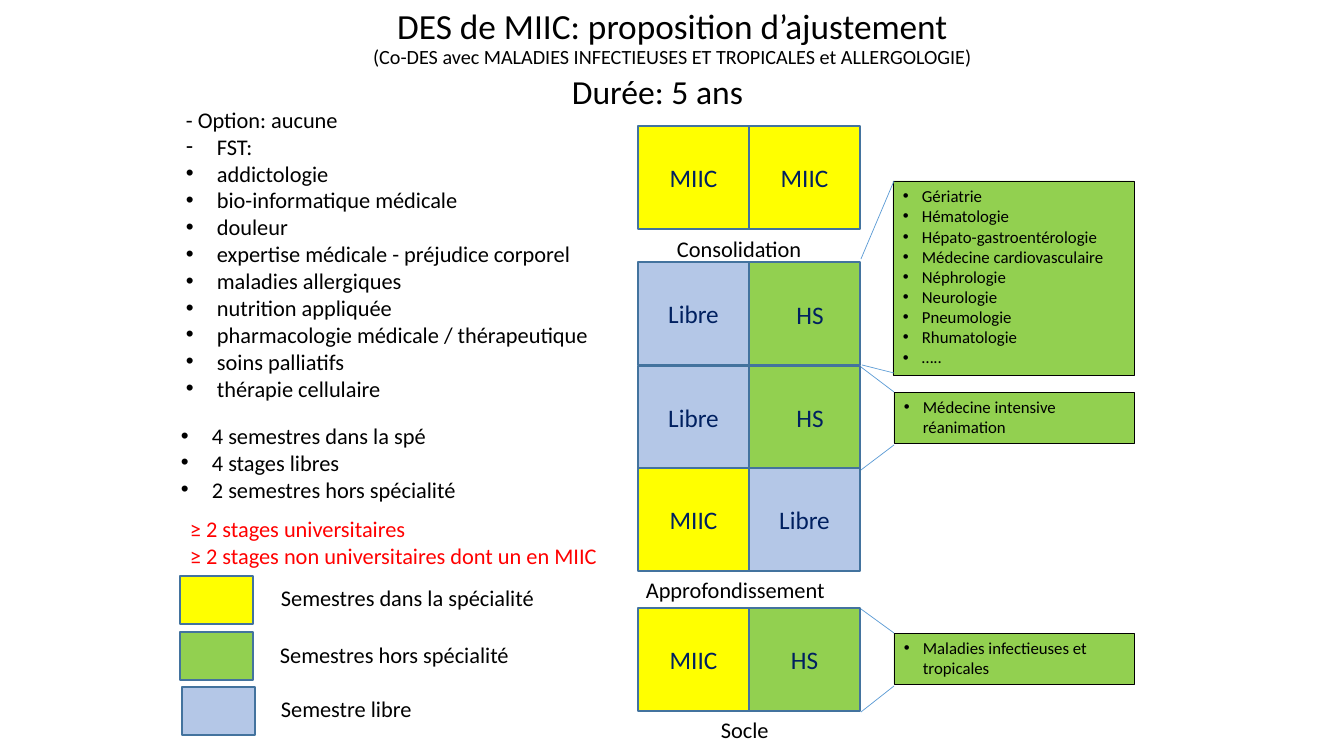
"""Builds the slide on the proposed adjustment of the MIIC diploma."""
from lxml import etree
from pptx import Presentation
from pptx.dml.color import RGBColor
from pptx.enum.shapes import MSO_CONNECTOR, MSO_SHAPE
from pptx.enum.text import MSO_ANCHOR, PP_ALIGN
from pptx.oxml.ns import qn
from pptx.util import Emu, Pt

SCALE = 914400 / 100.8
PAGE = (1344, 756)
FONT = "Calibri"
COLORS = {
    "black": "000000", "red": "FF0000", "navy": "002060", "edge": "43739E", "link": "5B9BD5",
    "MIIC": "FFFF00", "HS": "92D050", "Libre": "B4C7E7",
}

TITLE = "DES de MIIC: proposition d’ajustement"
SUBTITLE = "(Co-DES avec MALADIES INFECTIEUSES ET TROPICALES et ALLERGOLOGIE)"
TITLE_BOX = (180, 3, 985, 72)
DURATION = ("Durée: 5 ans", (385, 66, 545, 51))

OPTIONS = [
    ("", "- Option: aucune"), ("-", "FST:"), ("•", "addictologie"),
    ("•", "bio-informatique médicale"), ("•", "douleur"),
    ("•", "expertise médicale - préjudice corporel"), ("•", "maladies allergiques"),
    ("•", "nutrition appliquée"), ("•", "pharmacologie médicale / thérapeutique"),
    ("•", "soins palliatifs"), ("•", "thérapie cellulaire"),
]
SEMESTERS = [
    ("•", "4 semestres dans la spé"), ("•", "4 stages libres"), ("•", "2 semestres hors spécialité"),
]
RULES = [
    ("", "≥ 2 stages universitaires"), ("", "≥ 2 stages non universitaires dont un en MIIC"),
]
LISTS = [
    (OPTIONS, (176, 101, 430, 316), "black"),
    (SEMESTERS, (171, 417, 333, 92), "black"),
    (RULES, (180, 510, 440, 65), "red"),
]

LEGEND = [
    ("MIIC", "Semestres dans la spécialité", 180, 576, 271, 579),
    ("HS", "Semestres hors spécialité", 180, 632, 270, 636),
    ("Libre", "Semestre libre", 182, 687, 271, 690),
]
SWATCH = (73, 48)

CELL = (111, 103)
GRID_LEFT = 638
GRID = [
    (126, ("MIIC", "MIIC")),
    (262, ("Libre", "HS")),
    (366, ("Libre", "HS")),
    (468, ("MIIC", "Libre")),
    (608, ("MIIC", "HS")),
]
SHIFTED_LABELS = {262: (786, 294, 48, 40), 366: (786, 397, 48, 40)}
PHASES = [
    ("Consolidation", (667, 230, 146, 37)),
    ("Approfondissement", (636, 571, 202, 37)),
    ("Socle", (711, 711, 69, 37)),
]

CALLOUTS = [
    (["Gériatrie", "Hématologie", "Hépato-gastroentérologie", "Médecine cardiovasculaire",
      "Néphrologie", "Neurologie", "Pneumologie", "Rhumatologie", "….."],
     (893, 181, 241, 194), [(861, 259, 894, 181), (862, 365, 894, 373)]),
    (["Médecine intensive réanimation"],
     (894, 392, 240, 51), [(861, 367, 894, 392), (861, 470, 894, 445)]),
    (["Maladies infectieuses et tropicales"],
     (894, 633, 240, 51), [(861, 609, 894, 633), (861, 712, 894, 686)]),
]


def px(*values):
    return [Emu(round(value * SCALE)) for value in values]


def rgb(name):
    return RGBColor.from_string(COLORS[name])


def style(para, size, color="black", align=PP_ALIGN.LEFT):
    para.alignment = align
    for span in para.runs:
        span.font.name = FONT
        span.font.size = Pt(size)
        span.font.color.rgb = rgb(color)


def add_bullet(para, mark, indent):
    properties = para._p.get_or_add_pPr()
    width = px(indent)[0]
    properties.set("marL", str(width))
    properties.set("indent", str(-width))
    etree.SubElement(properties, qn("a:buFont")).set("typeface", "Arial")
    etree.SubElement(properties, qn("a:buChar")).set("char", mark)


def fill_list(frame, items, size, indent, color="black"):
    frame.text = "\n".join(text for _, text in items)
    for para, (mark, _) in zip(frame.paragraphs, items):
        style(para, size, color)
        if mark:
            add_bullet(para, mark, indent)


def add_text(page, area, text="", size=16, color="black", align=PP_ALIGN.LEFT, wrap=True):
    box = page.shapes.add_textbox(*px(*area))
    frame = box.text_frame
    frame.word_wrap = wrap
    frame.text = text
    style(frame.paragraphs[0], size, color, align)
    return frame


def add_box(page, area, kind, edge="edge", width=1):
    box = page.shapes.add_shape(MSO_SHAPE.RECTANGLE, *px(*area))
    box.shadow.inherit = False
    box.fill.solid()
    box.fill.fore_color.rgb = rgb(kind)
    box.line.color.rgb = rgb(edge)
    box.line.width = Pt(width)
    return box.text_frame


def add_link(page, ends):
    link = page.shapes.add_connector(MSO_CONNECTOR.STRAIGHT, *px(*ends))
    link.line.color.rgb = rgb("link")
    link.line.width = Pt(0.5)
    etree.SubElement(link._element.spPr, qn("a:effectLst"))


def add_headings(page):
    frame = add_text(page, TITLE_BOX, f"{TITLE}\v{SUBTITLE}", 25.2, align=PP_ALIGN.CENTER)
    frame.vertical_anchor = MSO_ANCHOR.MIDDLE
    para = frame.paragraphs[0]
    para.line_spacing = 0.9
    para.runs[1].font.size = Pt(14.4)
    text, area = DURATION
    add_text(page, area, text, 24, align=PP_ALIGN.CENTER)


def add_left_side(page):
    for items, area, color in LISTS:
        fill_list(add_text(page, area), items, 16, 31, color)
    for kind, text, left, top, text_left, text_top in LEGEND:
        add_box(page, (left, top, *SWATCH), kind)
        add_text(page, (text_left, text_top, 276, 37), text, wrap=False)


def add_grid(page):
    for top, kinds in GRID:
        for column, kind in enumerate(kinds):
            frame = add_box(page, (GRID_LEFT + column * CELL[0], top, *CELL), kind)
            if kind == "HS" and top in SHIFTED_LABELS:
                add_text(page, SHIFTED_LABELS[top], kind, 18, "navy", PP_ALIGN.CENTER, False)
                continue
            frame.text = kind
            frame.vertical_anchor = MSO_ANCHOR.MIDDLE
            style(frame.paragraphs[0], 18, "navy", PP_ALIGN.CENTER)
    for text, area in PHASES:
        add_text(page, area, text, wrap=False)


def add_callouts(page):
    for names, area, links in CALLOUTS:
        frame = add_box(page, area, "HS", "black", 0.25)
        frame.word_wrap = True
        frame.vertical_anchor = MSO_ANCHOR.TOP
        fill_list(frame, [("•", name) for name in names], 12, 19)
        for ends in links:
            add_link(page, ends)


def main():
    deck = Presentation()
    deck.slide_width, deck.slide_height = px(*PAGE)
    page = deck.slides.add_slide(deck.slide_layouts[6])
    add_headings(page)
    add_left_side(page)
    add_grid(page)
    add_callouts(page)
    deck.save("out.pptx")


if __name__ == "__main__":
    main()
